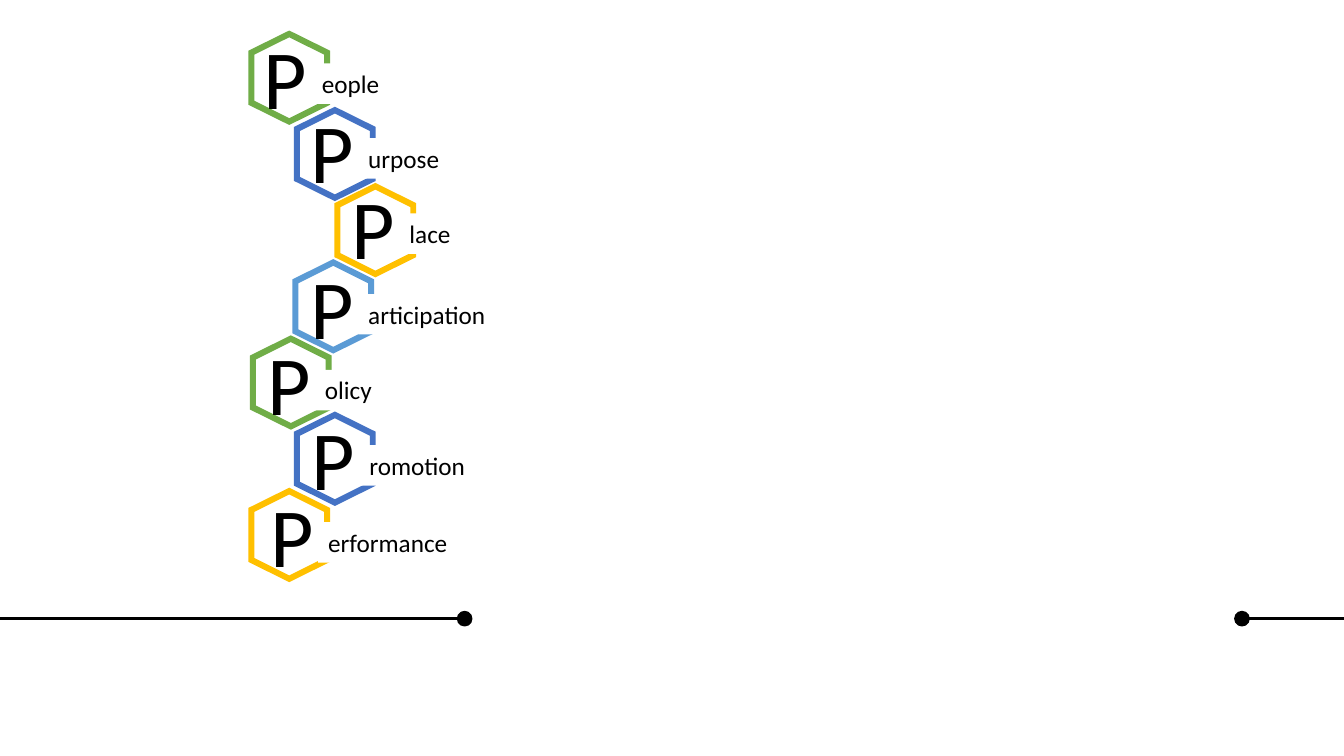
from pptx import Presentation
from pptx.dml.color import RGBColor
from pptx.enum.shapes import MSO_CONNECTOR, MSO_SHAPE
from pptx.enum.text import MSO_ANCHOR, PP_ALIGN as Align
from pptx.oxml.ns import qn
from pptx.util import Cm, Pt
from lxml.etree import SubElement

GREEN, BLUE, YELLOW, SKY = "70AD47", "4472C4", "FFC000", "5B9BD5"
BLACK, WHITE = "000000", "FFFFFF"
FONT = "Calibri"
INITIAL = "P"

# rest of the word, colour, hexagon centre x, initial's left and top, label width (cm)
WORDS = [
    ("eople", GREEN, 7.29, 6.65, 0.51, 3.12),
    ("urpose", BLUE, 8.44, 7.82, 2.39, 3.12),
    ("lace", YELLOW, 9.46, 8.86, 4.29, 3.12),
    ("articipation", SKY, 8.40, 7.82, 6.32, 4.17),
    ("olicy", GREEN, 7.33, 6.73, 8.23, 4.17),
    ("romotion", BLUE, 8.44, 7.85, 10.13, 4.17),
    ("erformance", YELLOW, 7.29, 6.81, 12.07, 4.17),
]
FIRST_CENTRE, PITCH = 1.96, 1.92
OUTER = (1.03, 1.19, 0.68)  # half width, half height, shoulder height
INNER = (0.88, 1.02, 0.58)
INITIAL_SIZE = (1.42, 2.82)
LABEL_OFFSET, LABEL_HEIGHT = (1.21, 1.09), 1.02
LABEL_INSET = 0.25

SLIDE_WIDTH, SLIDE_HEIGHT = 33.87, 19.05
RULE_Y, DOT = 15.59, 0.36
RULES = [(0, 11.86, 11.53), (SLIDE_WIDTH, 31.12, 31.12)]  # from, to, dot left


def paint(colour_format, colour):
    colour_format.solid()
    colour_format.fore_color.rgb = RGBColor.from_string(colour)


def add_hexagon_ring(shapes, x, y, colour):
    def corners(half_width, half_height, shoulder):
        return [(Cm(x + dx), Cm(y + dy)) for dx, dy in (
            (0, -half_height), (half_width, -shoulder), (half_width, shoulder),
            (0, half_height), (-half_width, shoulder), (-half_width, -shoulder))]

    outer, inner = corners(*OUTER), corners(*INNER)[::-1]
    builder = shapes.build_freeform(*outer[0])
    builder.add_line_segments(outer[1:])
    builder.move_to(*inner[0])
    builder.add_line_segments(inner[1:])
    ring = builder.convert_to_shape()
    ring.shadow.inherit = False
    paint(ring.fill, colour)
    ring.line.fill.background()


def write(shape, text, size, inset):
    frame = shape.text_frame
    frame.word_wrap = True
    frame.vertical_anchor = MSO_ANCHOR.TOP
    frame.margin_left = frame.margin_right = Cm(inset)
    paragraph = frame.paragraphs[0]
    paragraph.text = text
    paragraph.alignment = Align.LEFT
    paragraph.font.name = FONT
    paragraph.font.size = Pt(size)
    paragraph.font.color.rgb = RGBColor.from_string(BLACK)


def add_word(shapes, row, ending, colour, centre, left, top, width):
    add_hexagon_ring(shapes, centre, FIRST_CENTRE + row * PITCH, colour)
    dx, dy = LABEL_OFFSET
    label = shapes.add_shape(MSO_SHAPE.RECTANGLE, Cm(left + dx), Cm(top + dy),
                             Cm(width), Cm(LABEL_HEIGHT))
    label.shadow.inherit = False
    paint(label.fill, WHITE)
    label.line.fill.background()
    write(label, ending, 18, LABEL_INSET)
    initial = shapes.add_textbox(Cm(left), Cm(top), *map(Cm, INITIAL_SIZE))
    write(initial, INITIAL, 60, 0)


def add_dotted_rule(shapes, start, end, dot_left):
    """Draw a line from the slide edge that ends in a round dot."""
    rule = shapes.add_connector(MSO_CONNECTOR.STRAIGHT, Cm(start), Cm(RULE_Y),
                                Cm(end), Cm(RULE_Y))
    SubElement(rule._element.spPr, qn("a:effectLst"))
    dot = shapes.add_shape(MSO_SHAPE.OVAL, Cm(dot_left), Cm(RULE_Y - DOT / 2),
                           Cm(DOT), Cm(DOT))
    dot.shadow.inherit = False
    paint(dot.fill, BLACK)
    for part, weight in ((rule, 2.25), (dot, 1)):
        paint(part.line.fill, BLACK)
        part.line.width = Pt(weight)


def main():
    deck = Presentation()
    deck.slide_width, deck.slide_height = Cm(SLIDE_WIDTH), Cm(SLIDE_HEIGHT)
    slide = deck.slides.add_slide(deck.slide_layouts[6])
    for rule in RULES:
        add_dotted_rule(slide.shapes, *rule)
    for row, word in enumerate(WORDS):
        add_word(slide.shapes, row, *word)
    deck.save("out.pptx")


if __name__ == "__main__":
    main()
